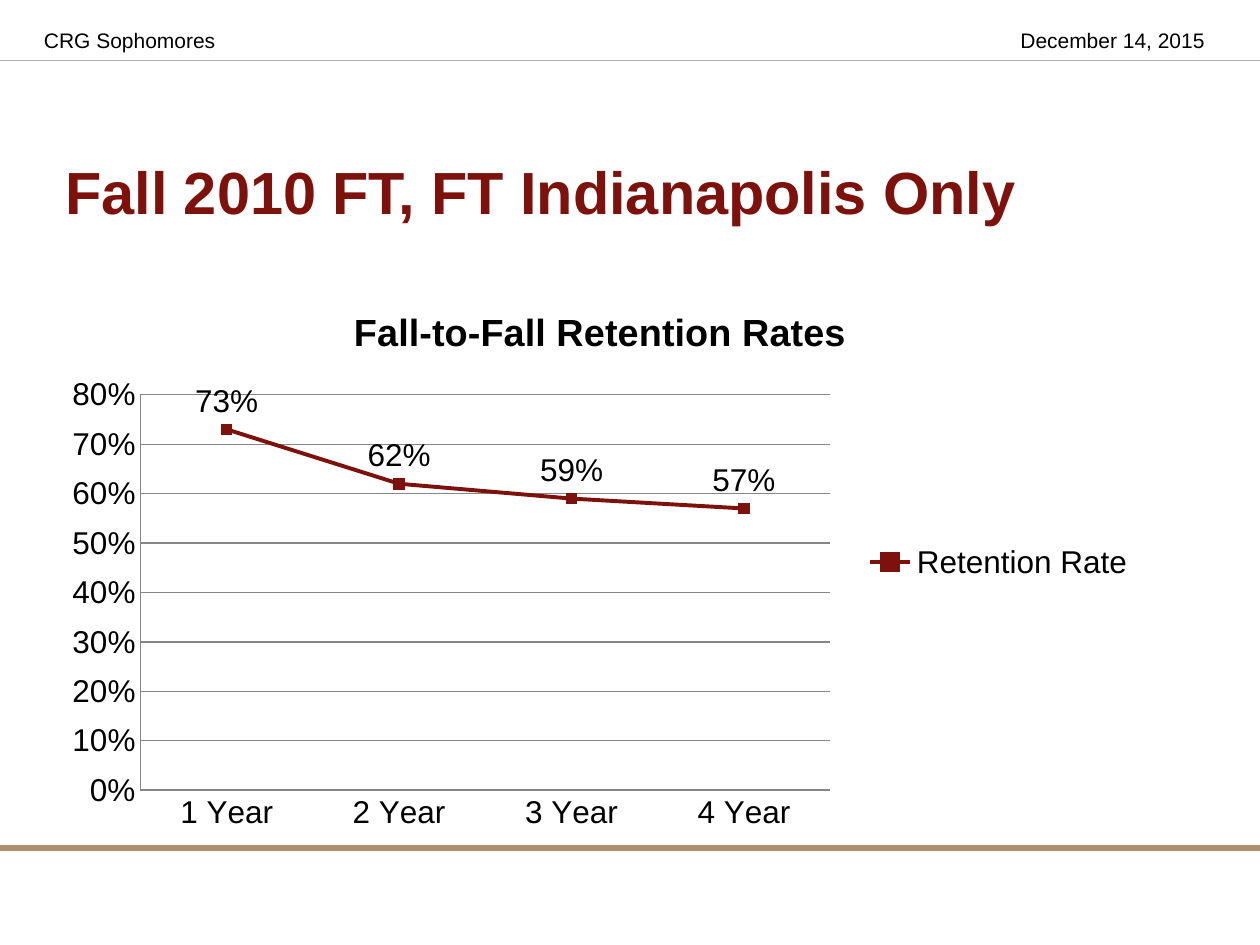
from lxml import etree
from pptx import Presentation
from pptx import util as u
from pptx.chart import data as chart_data
from pptx.dml.color import RGBColor
from pptx.enum import chart as ch, shapes, text
from pptx.oxml import parse_xml
from pptx.oxml.ns import nsdecls, qn

# Content
TITLE = "Fall 2010 FT, FT Indianapolis Only"
HEADERS = [("CRG Sophomores", 0.25, 5.42), ("December 14, 2015", 8, 1.75)]
CHART_TITLE = "Fall-to-Fall Retention Rates"
SERIES = "Retention Rate"
RATES = {"1 Year": 0.73, "2 Year": 0.62, "3 Year": 0.59, "4 Year": 0.57}
RULES = [(0.48, "silver", 0.75), (6.73, "gold", 3.75)]
PLOT_LAYOUT = {"x": 0.08, "y": 0.2, "w": 0.63, "h": 0.71}  # fractions of the chart

THEME = {
    "font": "Arial",
    "crimson": RGBColor.from_string("7D110C"),
    "gold": RGBColor.from_string("AF906A"),
    "silver": RGBColor.from_string("B0B2B4"),
    "grid": RGBColor.from_string("868686"),
    "black": RGBColor.from_string("000000"),
    "title": 34, "header": 12, "chart": 18, "chart_title": 21.6,
}


def style_font(font, size, color="black", bold=False):
    font.name, font.size, font.bold = THEME["font"], u.Pt(THEME[size]), bold
    font.color.rgb = THEME[color]


def style_line(line, color, width):
    line.color.rgb, line.width = THEME[color], u.Pt(width)


def add_text(slide, content, box, size, color="black", bold=False,
             anchor=text.MSO_ANCHOR.TOP):
    frame = slide.shapes.add_textbox(*map(u.Inches, box)).text_frame
    frame.word_wrap, frame.vertical_anchor = True, anchor
    run = frame.paragraphs[0].add_run()
    run.text = content
    style_font(run.font, size, color, bold)


def add_rule(slide, y, color, width):
    rule = slide.shapes.add_connector(
        shapes.MSO_CONNECTOR.STRAIGHT, 0, u.Inches(y), u.Inches(10), u.Inches(y))
    style_line(rule.line, color, width)
    etree.SubElement(rule.element.spPr, qn("a:effectLst"))


def set_plot_layout(chart):
    plot_area = chart.element.find(".//" + qn("c:plotArea"))
    for old_layout in plot_area.findall(qn("c:layout")):
        plot_area.remove(old_layout)
    modes = '<c:xMode val="edge"/><c:yMode val="edge"/>'
    sizes = "".join(f'<c:{k} val="{v}"/>' for k, v in PLOT_LAYOUT.items())
    plot_area.insert(0, parse_xml(
        f'<c:layout {nsdecls("c")}><c:manualLayout><c:layoutTarget val="inner"/>'
        f"{modes}{sizes}</c:manualLayout></c:layout>"))


def add_retention_chart(slide):
    data = chart_data.CategoryChartData(number_format="0%")
    data.categories = list(RATES)
    data.add_series(SERIES, list(RATES.values()))
    chart = slide.shapes.add_chart(
        ch.XL_CHART_TYPE.LINE_MARKERS,
        *map(u.Inches, (0.42, 2.25, 8.69, 4.42)), data).chart
    style_font(chart.font, "chart")
    set_plot_layout(chart)

    # Title and legend
    chart.has_title = True
    run = chart.chart_title.text_frame.paragraphs[0].add_run()
    run.text = CHART_TITLE
    style_font(run.font, "chart_title", bold=True)
    chart.has_legend = True
    chart.legend.position = ch.XL_LEGEND_POSITION.RIGHT
    chart.legend.include_in_layout = False

    # Axes
    value_axis = chart.value_axis
    value_axis.minimum_scale, value_axis.maximum_scale = 0, 0.8
    value_axis.major_unit = 0.1
    value_axis.tick_labels.number_format = "0%"
    value_axis.tick_labels.number_format_is_linked = False
    style_line(value_axis.major_gridlines.format.line, "grid", 0.75)
    for axis in (value_axis, chart.category_axis):
        axis.major_tick_mark = axis.minor_tick_mark = ch.XL_TICK_MARK.NONE
        style_line(axis.format.line, "grid", 0.75)

    # Series and labels
    plot = chart.plots[0]
    plot.vary_by_categories = False
    series = plot.series[0]
    series.smooth = False
    style_line(series.format.line, "crimson", 2.25)
    marker = series.marker
    marker.style, marker.size = ch.XL_MARKER_STYLE.SQUARE, 6
    marker.format.fill.solid()
    marker.format.fill.fore_color.rgb = THEME["crimson"]
    marker.format.line.color.rgb = THEME["crimson"]
    labels = series.data_labels
    labels.show_value, labels.position = True, ch.XL_LABEL_POSITION.ABOVE
    labels.number_format, labels.number_format_is_linked = "0%", False
    style_font(labels.font, "chart")


def main():
    presentation = Presentation()
    presentation.slide_width, presentation.slide_height = u.Inches(10), u.Inches(7.5)
    slide = presentation.slides.add_slide(presentation.slide_layouts[6])
    for rule in RULES:
        add_rule(slide, *rule)
    add_text(slide, TITLE, (0.42, 0.89, 9.03, 1.25), "title", "crimson", True,
             text.MSO_ANCHOR.MIDDLE)
    add_retention_chart(slide)
    for content, left, width in HEADERS:
        add_text(slide, content, (left, 0.17, width, 0.33), "header")
    presentation.save("out.pptx")


if __name__ == "__main__":
    main()
